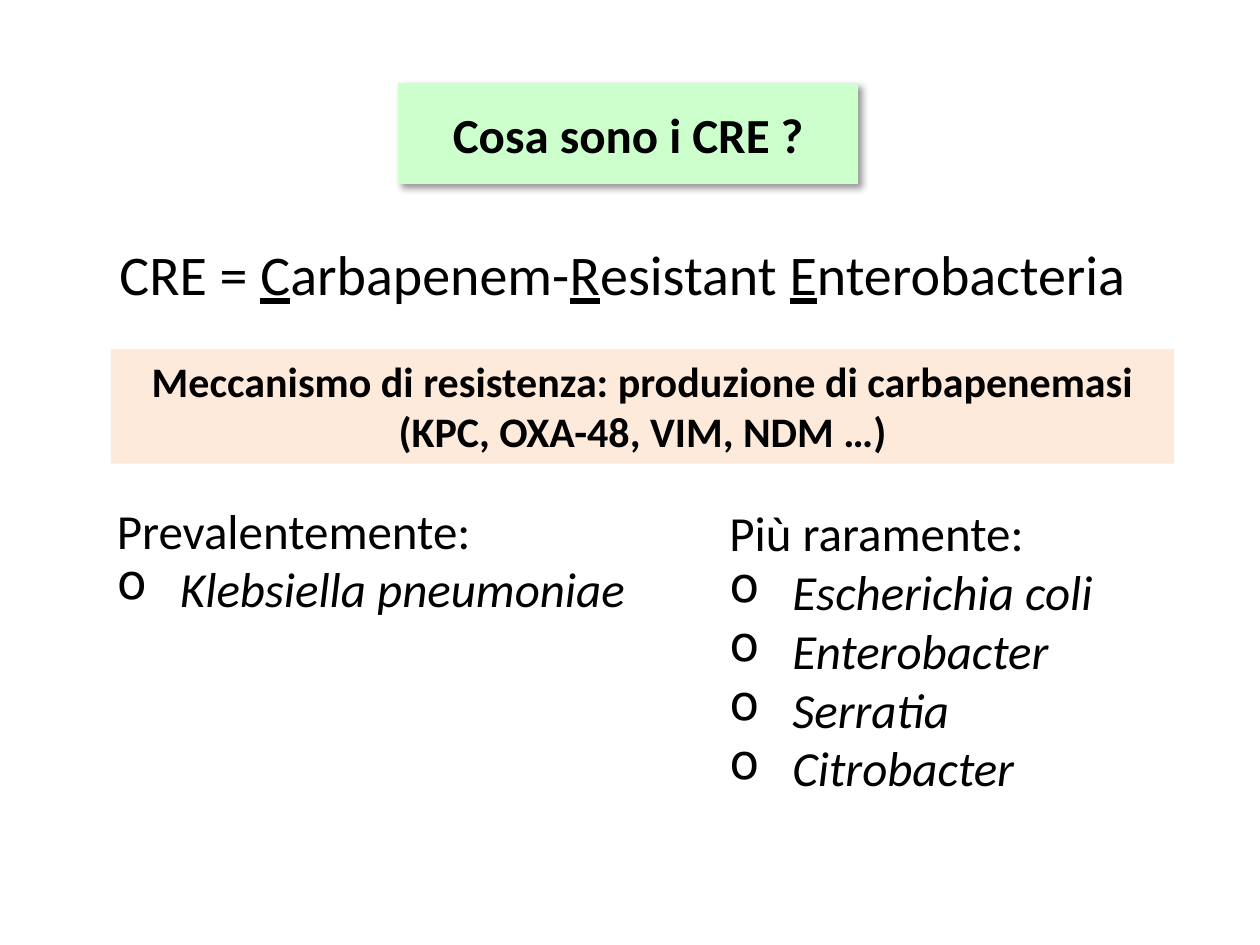
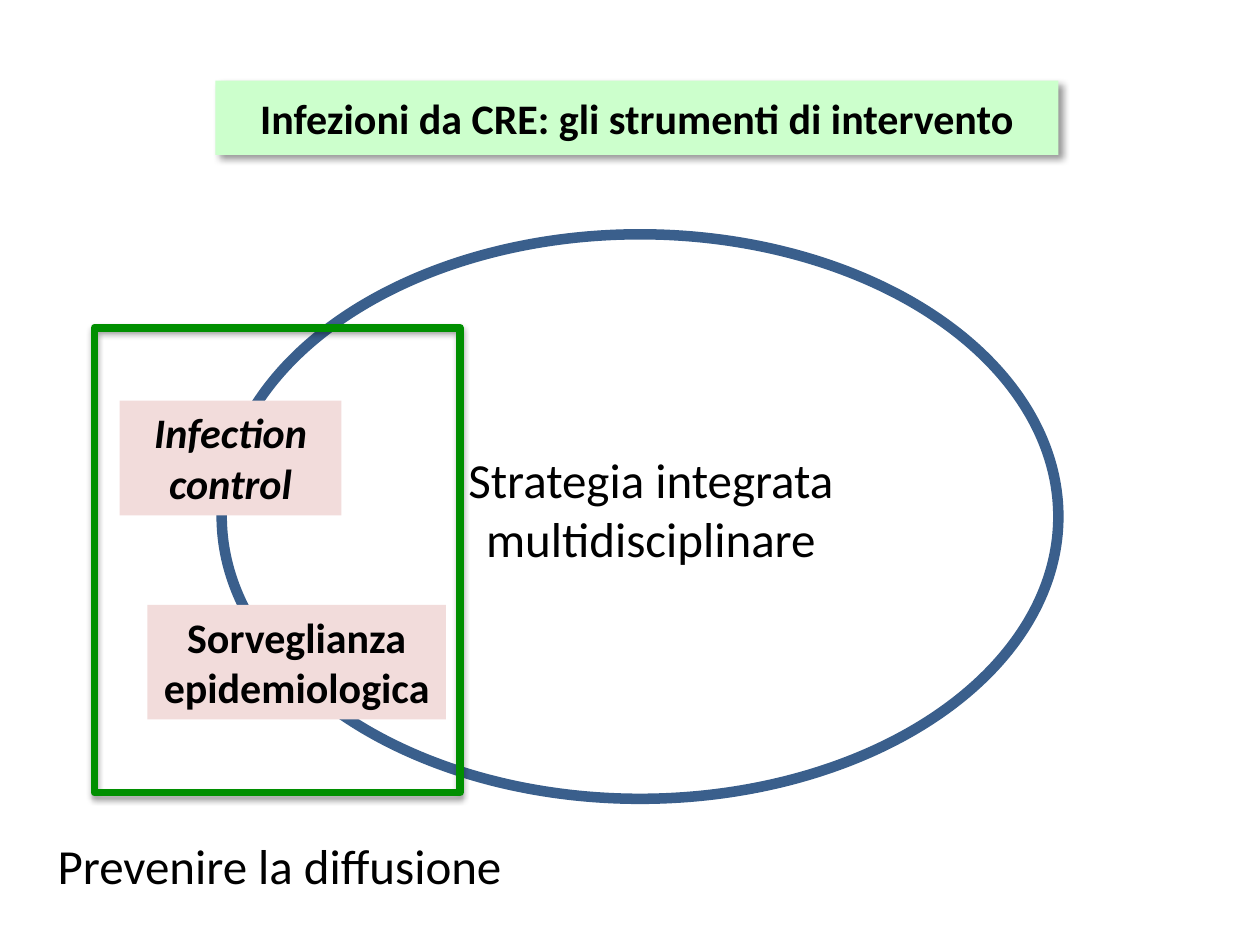
"""Build two slides on carbapenem-resistant enterobacteria (CRE)."""
from dataclasses import dataclass

from lxml import etree
from pptx import Presentation
from pptx.dml.color import RGBColor
from pptx.enum.shapes import MSO_SHAPE
from pptx.enum.text import MSO_ANCHOR, PP_ALIGN
from pptx.oxml.ns import qn
from pptx.util import Inches, Pt

RECTANGLE, OVAL = MSO_SHAPE.RECTANGLE, MSO_SHAPE.OVAL
LEFT, CENTER = PP_ALIGN.LEFT, PP_ALIGN.CENTER
TOP, MIDDLE = MSO_ANCHOR.TOP, MSO_ANCHOR.MIDDLE


@dataclass(frozen=True)
class Theme:
    font: str = "Calibri"
    text: str = "000000"
    title_fill: str = "CCFFCC"
    mechanism_fill: str = "FDEADA"
    tool_fill: str = "F2DCDB"
    strategy_line: str = "3A5F8C"
    prevention_line: str = "008F00"
    definition_size: int = 32
    body_size: int = 28
    label_size: int = 24
    title_shadow: tuple = (40, 4, 3, 45)
    frame_shadow: tuple = (35, 3.1, 1.8, 90)


class SlideBuilder:
    def __init__(self, deck, theme):
        self.deck = deck
        self.theme = theme
        self.page = None

    def new_page(self):
        self.page = self.deck.slides.add_slide(self.deck.slide_layouts[6])

    def fill_text(self, shape, lines, size, align=LEFT, anchor=TOP, wrap=True, bold=False, italic=False):
        frame = shape.text_frame
        frame.word_wrap = wrap
        frame.vertical_anchor = anchor
        for index, line in enumerate(lines):
            para = frame.add_paragraph() if index else frame.paragraphs[0]
            para.text = line
            para.alignment = align
            self.style(para, size, bold, italic)

    def style(self, para, size, bold=False, italic=False):
        font = para.font
        font.name = self.theme.font
        font.size = Pt(size)
        font.bold = bold
        font.italic = italic
        font.color.rgb = RGBColor.from_string(self.theme.text)

    def shape(self, kind, place, fill=None, line=None, width=0, shadow=None):
        shape = self.page.shapes.add_shape(kind, *map(Inches, place))
        if fill:
            shape.fill.solid()
            shape.fill.fore_color.rgb = RGBColor.from_string(fill)
        else:
            shape.fill.background()
        if line:
            shape.line.color.rgb = RGBColor.from_string(line)
            shape.line.width = Pt(width)
        else:
            shape.line.fill.background()
        shape.shadow.inherit = False
        if shadow:
            self.cast_shadow(shape, *shadow)
        return shape

    def cast_shadow(self, shape, opacity, blur, distance, angle):
        effects = shape._element.spPr.find(qn("a:effectLst"))
        outer = etree.SubElement(
            effects, qn("a:outerShdw"), blurRad=str(Pt(blur)), dist=str(Pt(distance)),
            dir=str(angle * 60000), algn="tl", rotWithShape="0")
        color = etree.SubElement(outer, qn("a:srgbClr"), val=self.theme.text)
        etree.SubElement(color, qn("a:alpha"), val=str(opacity * 1000))

    def title(self, place, text, size):
        band = self.shape(RECTANGLE, place, self.theme.title_fill, shadow=self.theme.title_shadow)
        self.fill_text(band, [text], size, CENTER, MIDDLE, bold=True)

    def label(self, place, lines, fill, italic=False):
        box = self.shape(RECTANGLE, place, fill)
        self.fill_text(box, lines, self.theme.label_size, CENTER, bold=True, italic=italic)

    def text(self, place, lines, align=LEFT):
        box = self.page.shapes.add_textbox(*map(Inches, place))
        self.fill_text(box, lines, self.theme.body_size, align, wrap=False)

    def definition(self, place, spans):
        box = self.page.shapes.add_textbox(*map(Inches, place))
        box.text_frame.word_wrap = False
        para = box.text_frame.paragraphs[0]
        self.style(para, self.theme.definition_size)
        for text, underlined in spans:
            span = para.add_run()
            span.text = text
            span.font.underline = underlined

    def species_list(self, place, heading, species):
        box = self.page.shapes.add_textbox(*map(Inches, place))
        self.fill_text(box, [heading, *species], self.theme.body_size)
        for para in box.text_frame.paragraphs[1:]:
            para.font.italic = True
            properties = para._p.get_or_add_pPr()
            properties.set("marL", str(Inches(0.5)))
            properties.set("indent", str(Inches(-0.5)))
            bullet = etree.Element(qn("a:buChar"), char="o")
            properties.insert(0, bullet)


def build_definition_page(builder):
    theme = builder.theme
    builder.new_page()
    builder.title((3.16, 0.66, 3.65, 0.8), "Cosa sono i CRE ?", theme.body_size)
    builder.definition((0.85, 1.85, 8.4, 0.64), [
        ("CRE = ", False), ("C", True), ("arbapenem-", False), ("R", True),
        ("esistant ", False), ("E", True), ("nterobacteria", False)])
    builder.species_list((0.83, 3.92, 4.27, 1.04), "Prevalentemente:", ["Klebsiella pneumoniae"])
    builder.species_list((5.69, 3.94, 3.25, 2.46), "Più raramente:",
                         ["Escherichia coli", "Enterobacter", "Serratia", "Citrobacter"])
    builder.label((0.88, 2.77, 8.44, 0.91), [
        "Meccanismo di resistenza: produzione di carbapenemasi",
        "(KPC, OXA-48, VIM, NDM …)"], theme.mechanism_fill)


def build_tools_page(builder):
    theme = builder.theme
    builder.new_page()
    builder.title((1.71, 0.64, 6.69, 0.59),
                  "Infezioni da CRE: gli strumenti di intervento", theme.label_size)
    builder.shape(OVAL, (1.76, 1.86, 6.64, 4.48), line=theme.strategy_line, width=6)
    builder.label((0.95, 3.18, 1.76, 0.91), ["Infection control"], theme.tool_fill, italic=True)
    builder.label((1.17, 4.8, 2.37, 0.91), ["Sorveglianza", "epidemiologica"], theme.tool_fill)
    builder.text((3.6, 3.52, 3.13, 1.04), ["Strategia integrata", "multidisciplinare"], CENTER)
    builder.shape(RECTANGLE, (0.75, 2.6, 2.9, 3.69), line=theme.prevention_line,
                  width=4.5, shadow=theme.frame_shadow)
    builder.text((0.36, 6.58, 3.77, 0.57), ["Prevenire la diffusione"])


def main():
    deck = Presentation()
    deck.slide_width, deck.slide_height = Inches(10), Inches(7.5)
    builder = SlideBuilder(deck, Theme())
    build_definition_page(builder)
    build_tools_page(builder)
    deck.save("out.pptx")


if __name__ == "__main__":
    main()
